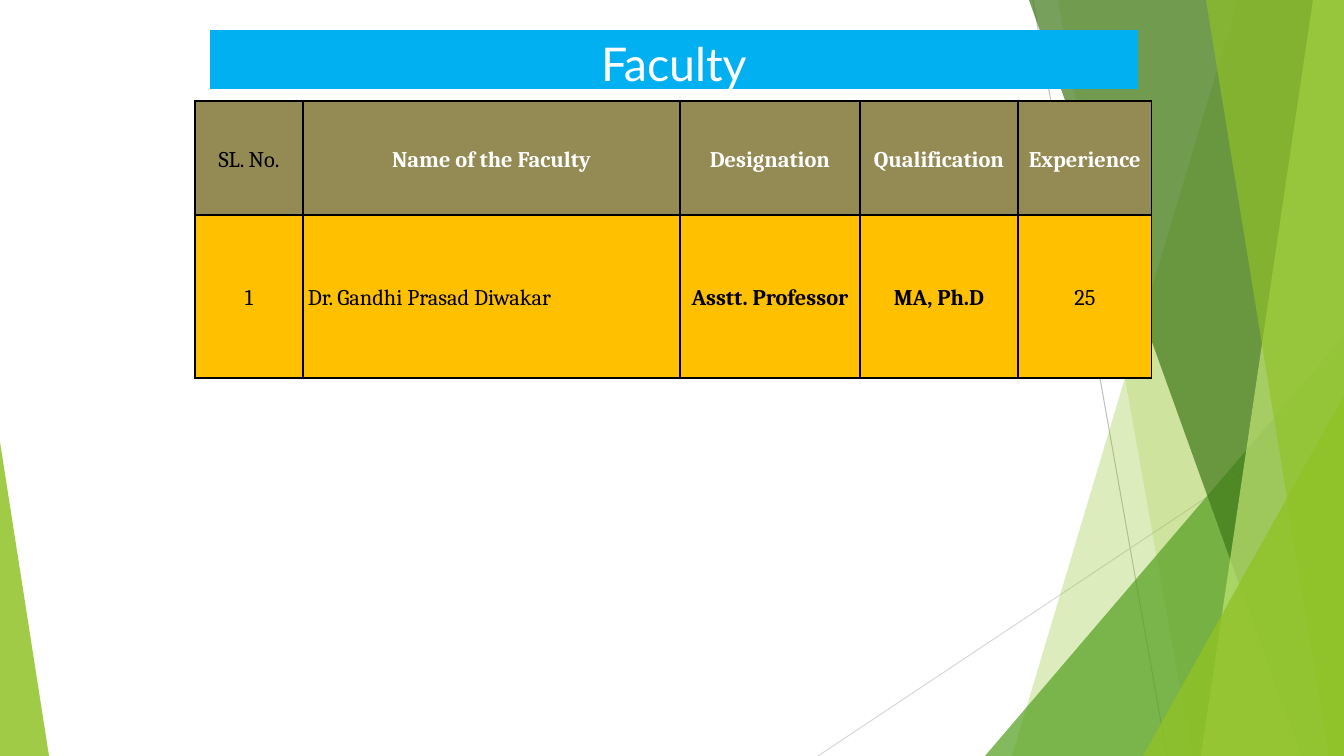
"""Build the faculty slide: a title bar and staff table over green facets."""
import pptx
import pptx.dml.color
import pptx.enum.shapes
import pptx.enum.text
import pptx.oxml
import pptx.oxml.ns
import pptx.util

PX = 914400 / 100.8
WIDTH, HEIGHT = 1344, 756
THEME = {
    "title_bar": "00B0F0", "title_text": "FFFFFF", "title_font": "Lato", "title_size": 33.2,
    "header": "948A54", "header_text": "FFFFFF", "body": "FFC000", "body_text": "000000",
    "table_font": "Cambria", "table_size": 16, "border": "000000",
    "lime": "90C226", "green": "54A021", "forest": "3F7819", "pale": "C0E474",
    "line": "BFBFBF", "light_line": "D9D9D9",
}


def px(length):
    """Turn pixels into EMU."""
    return round(length * PX)


def color(name):
    """Look up a theme colour."""
    return pptx.dml.color.RGBColor.from_string(THEME[name])


presentation = pptx.Presentation()
presentation.slide_width, presentation.slide_height = px(WIDTH), px(HEIGHT)
slide = presentation.slides.add_slide(presentation.slide_layouts[5])
shapes = slide.shapes

for start_x, start_y, end_x, end_y, name in [
    (1033, 0, 1167, HEIGHT, "line"),
    (WIDTH, 406, 818, HEIGHT, "light_line"),
]:
    connector = shapes.add_connector(
        pptx.enum.shapes.MSO_CONNECTOR.STRAIGHT, px(start_x), px(start_y), px(end_x), px(end_y))
    connector.line.color.rgb = color(name)
    connector.line.width = pptx.util.Pt(0.75)
    pptx.oxml.ns.qn("a:effectLst")
    connector._element.spPr.append(pptx.oxml.parse_xml(
        f'<a:effectLst {pptx.oxml.ns.nsdecls("a")}/>'))

facets = [
    ("band", 1238, 1012, "lime", 30),
    ("band", 1058, 1192, "lime", 20),
    ("triangle", 985, 336, 359, 1, "green", 72),
    ("band", 1029, 1301, "forest", 70),
    ("band", 1313, 1201, "pale", 70),
    ("band", 1206, 1329, "lime", 65),
    ("triangle", 1143, 396, 201, 1, "lime", 80),
    ("triangle", 0, 442, 49, 0, "lime", 85),
]
for kind, *geometry, name, opacity in facets:
    if kind == "band":
        top_x, bottom_x = geometry
        builder = shapes.build_freeform(top_x, 0, scale=PX)
        builder.add_line_segments([(WIDTH, 0), (WIDTH, HEIGHT), (bottom_x, HEIGHT)])
        facet = builder.convert_to_shape()
    else:
        left, top, width, apex = geometry
        facet = shapes.add_shape(
            pptx.enum.shapes.MSO_SHAPE.ISOSCELES_TRIANGLE,
            px(left), px(top), px(width), px(HEIGHT - top))
        facet.adjustments[0] = apex
    facet.shadow.inherit = False
    facet.line.fill.background()
    facet.fill.solid()
    facet.fill.fore_color.rgb = color(name)
    fill_color = facet._element.spPr.find(".//" + pptx.oxml.ns.qn("a:srgbClr"))
    fill_color.append(pptx.oxml.parse_xml(
        f'<a:alpha {pptx.oxml.ns.nsdecls("a")} val="{opacity * 1000}"/>'))

title = shapes.title
shapes._spTree.append(title._element)
title.left, title.top, title.width, title.height = px(210), px(30), px(928), px(59)
title.fill.solid()
title.fill.fore_color.rgb = color("title_bar")
title.text_frame.text = "Faculty"
title.text_frame.auto_size = pptx.enum.text.MSO_AUTO_SIZE.NONE
title.text_frame.vertical_anchor = pptx.enum.text.MSO_ANCHOR.TOP
paragraph = title.text_frame.paragraphs[0]
paragraph.alignment = pptx.enum.text.PP_ALIGN.CENTER
paragraph.font.name = THEME["title_font"]
paragraph.font.size = pptx.util.Pt(THEME["title_size"])
paragraph.font.color.rgb = color("title_text")

rows = [
    ["SL. No.", "Name of the Faculty", "Designation", "Qualification", "Experience"],
    ["1", "Dr. Gandhi Prasad Diwakar", "Asstt. Professor", "MA, Ph.D", "25"],
]
bold_columns = [{1, 2, 3, 4}, {2, 3}]
column_widths = [108, 377, 180, 158, 134]
row_heights = [114, 163]
table = shapes.add_table(
    len(rows), len(column_widths), px(195), px(101),
    px(sum(column_widths)), px(sum(row_heights))).table
table.horz_banding = False
for column, width in zip(table.columns, column_widths):
    column.width = px(width)
for row, height in zip(table.rows, row_heights):
    row.height = px(height)

for row_index, texts in enumerate(rows):
    for column_index, text in enumerate(texts):
        is_header = row_index == 0
        cell = table.cell(row_index, column_index)
        cell.text = text
        cell.vertical_anchor = pptx.enum.text.MSO_ANCHOR.MIDDLE
        cell.margin_left = cell.margin_right = px(5)
        cell.margin_top = cell.margin_bottom = 0
        paragraph = cell.text_frame.paragraphs[0]
        is_name = not is_header and column_index == 1
        paragraph.alignment = (
            pptx.enum.text.PP_ALIGN.LEFT if is_name else pptx.enum.text.PP_ALIGN.CENTER)
        paragraph.line_spacing = 1.15
        paragraph.font.name = THEME["table_font"]
        paragraph.font.size = pptx.util.Pt(THEME["table_size"])
        paragraph.font.bold = column_index in bold_columns[row_index]
        paragraph.font.color.rgb = color(
            "header_text" if is_header and column_index > 0 else "body_text")
        for side in ("lnL", "lnR", "lnT", "lnB"):
            cell._tc.get_or_add_tcPr().append(pptx.oxml.parse_xml(
                f'<a:{side} {pptx.oxml.ns.nsdecls("a")} w="{pptx.util.Pt(1)}"><a:solidFill>'
                f'<a:srgbClr val="{THEME["border"]}"/></a:solidFill></a:{side}>'))
        cell.fill.solid()
        cell.fill.fore_color.rgb = color("header" if is_header else "body")

presentation.save("out.pptx")
